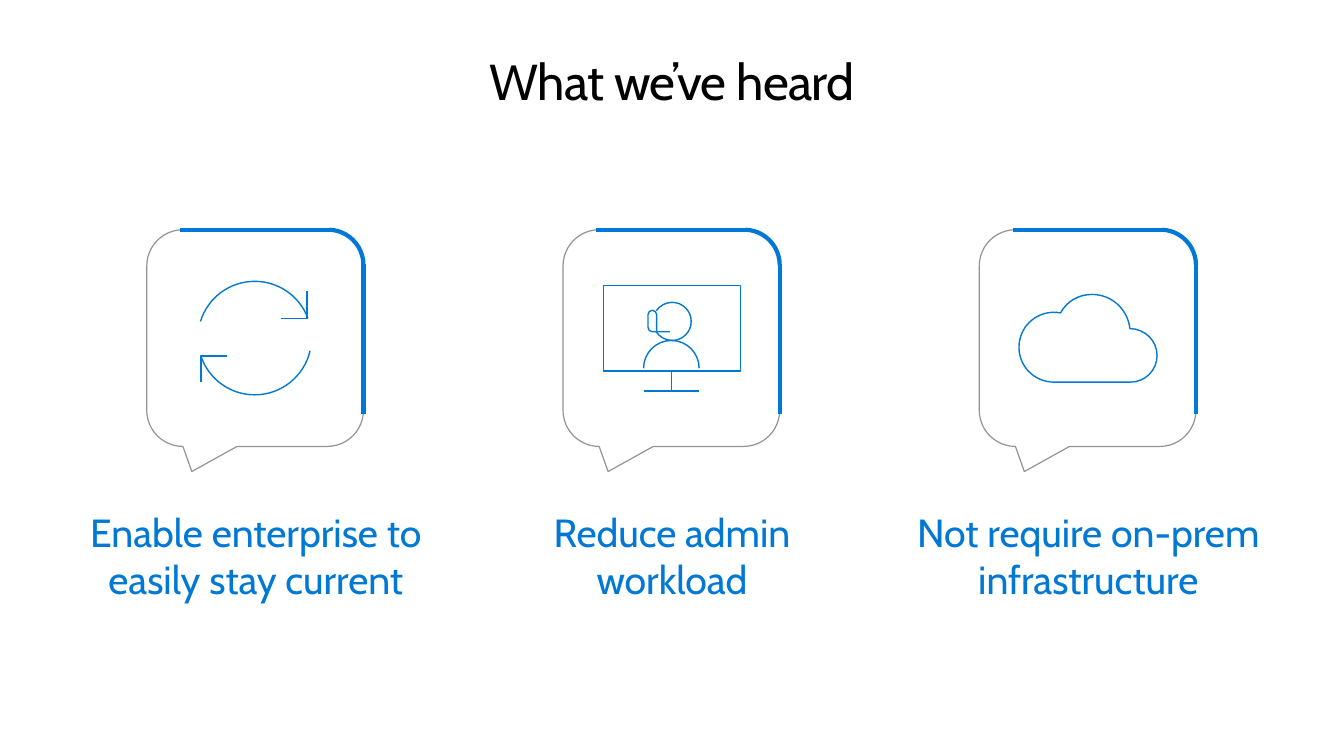
from math import ceil, cos, floor, radians, sin, tan

from lxml import etree
from pptx import Presentation
from pptx import oxml
from pptx import util as u
from pptx.dml.color import RGBColor
from pptx.enum import shapes, text

BLACK = RGBColor(0x00, 0x00, 0x00)
WHITE = RGBColor(0xFF, 0xFF, 0xFF)
GRAY = RGBColor(0x93, 0x93, 0x93)
BLUE = RGBColor(0x00, 0x78, 0xD4)
ACCENT = RGBColor(0x00, 0x78, 0xD7)
FONT = "Cabin"

LEFT, PITCH, COLUMN = 1.62, 10.49, 9.65
BUBBLE_LEFT, BUBBLE_TOP, BUBBLE = 3.7, 5.79, 5.46
CORNER = 1.78
CAPTION_TOP, CAPTION_HEIGHT = 12.68, 2.64


def arc(cx, cy, r, start, end):
    low, high = sorted((start, end))
    turns = [q * 90 for q in range(floor(low / 90) + 1, ceil(high / 90))]
    stops = [low, *turns, high]
    if end < start:
        stops.reverse()
    segments = [[(cx + r * cos(radians(start)), cy + r * sin(radians(start)))]]
    for first, last in zip(stops, stops[1:]):
        a, b = radians(first), radians(last)
        k = 4 / 3 * tan((b - a) / 4)
        segments.append([
            (cx + r * (cos(a) - k * sin(a)), cy + r * (sin(a) + k * cos(a))),
            (cx + r * (cos(b) + k * sin(b)), cy + r * (sin(b) - k * cos(b))),
            (cx + r * cos(b), cy + r * sin(b)),
        ])
    return segments


def line(*points):
    return [[point] for point in points]


REFRESH = [
    arc(2.72, 2.73, 1.43, 13, 162),
    arc(2.72, 2.73, 1.43, 339.5, 197),
    line((3.37, 2.24), (4.04, 2.24), (4.04, 1.55)),
    line((2.03, 3.18), (1.37, 3.18), (1.37, 3.84)),
]
MONITOR = [
    line((4.47, 2.36), (4.47, 3.56), (1.02, 3.56), (1.02, 1.4), (4.47, 1.4), (4.47, 2.36)),
    line((2.74, 3.56), (2.74, 4.06)),
    line((2.03, 4.06), (3.43, 4.06)),
]
AGENT = [
    arc(2.73, 3.49, 0.7, 180, 360),
    line((2.36, 2.57)) + arc(2.25, 2.14, 0.11, 0, -180)
    + arc(2.25, 2.46, 0.11, 180, 90) + line((2.69, 2.57)),
    arc(2.75, 2.31, 0.48, 149, -146),
]
CLOUD = [
    arc(1.88, 2.96, 0.88, 90, 281) + arc(2.84, 2.59, 0.96, 213, 354)[1:]
    + arc(3.81, 3.17, 0.67, 270, 450)[1:],
]

TITLE = "What we’ve heard"
NEEDS = [
    ("Enable enterprise to easily stay current", [REFRESH]),
    ("Reduce admin\nworkload", [MONITOR, AGENT]),
    ("Not require on-prem infrastructure", [CLOUD]),
]


def write(sp, content, size, color, spacing=0, inset=None):
    tf = sp.text_frame
    tf.word_wrap = True
    tf.auto_size = text.MSO_AUTO_SIZE.SHAPE_TO_FIT_TEXT
    tf.vertical_anchor = text.MSO_ANCHOR.TOP
    if inset is not None:
        tf.margin_left = tf.margin_top = tf.margin_right = tf.margin_bottom = inset
    p = tf.paragraphs[0]
    p.text = content
    p.alignment = text.PP_ALIGN.CENTER
    for r in p.runs:
        r.font.name = FONT
        r.font.size = u.Pt(size)
        r.font.color.rgb = color
        if spacing:
            r.font._element.set("spc", str(int(spacing * 100)))


def outline(sp, color, width):
    sp.line.color.rgb = color
    sp.line.width = u.Pt(width)


def add_bubble(group, left, top):
    sp = group.shapes.add_shape(shapes.MSO_SHAPE.ROUNDED_RECTANGULAR_CALLOUT,
                                u.Cm(left), u.Cm(top), u.Cm(BUBBLE), u.Cm(BUBBLE))
    for i, value in enumerate((-0.292, 0.616, 0.167)):
        sp.adjustments[i] = value
    sp.shadow.inherit = False
    sp.fill.solid()
    sp.fill.fore_color.rgb = WHITE
    outline(sp, GRAY, 0.85)

    sp = group.shapes.add_shape(shapes.MSO_SHAPE.ARC, u.Cm(left + BUBBLE - CORNER),
                                u.Cm(top), u.Cm(CORNER), u.Cm(CORNER))
    sp.adjustments[0] = 163.434
    sp.shadow.inherit = False
    sp.fill.background()
    outline(sp, ACCENT, 3)

    for x1, y1, x2, y2 in ((0.84, 0, 4.62, 0), (BUBBLE, 0.86, BUBBLE, 4.65)):
        sp = group.shapes.add_connector(shapes.MSO_CONNECTOR.STRAIGHT,
                                        u.Cm(left + x1), u.Cm(top + y1),
                                        u.Cm(left + x2), u.Cm(top + y2))
        outline(sp, ACCENT, 3)
        etree.SubElement(sp._element.spPr, oxml.ns.qn("a:effectLst"))


def bend(sp, segments):
    steps = iter(list(sp._element.iter(oxml.ns.qn("a:lnTo"))))
    for segment in segments:
        parts = [next(steps) for _ in segment]
        if len(parts) == 3:
            curve = etree.Element(oxml.ns.qn("a:cubicBezTo"))
            parts[0].addprevious(curve)
            for part in parts:
                curve.append(part[0])
                part.getparent().remove(part)


def add_icon(group, strokes, left, top):
    builder = None
    for stroke in strokes:
        points = [(u.Cm(left + x), u.Cm(top + y)) for segment in stroke for x, y in segment]
        if builder is None:
            builder = group.shapes.build_freeform(*points[0])
        else:
            builder.move_to(*points[0])
        builder.add_line_segments(points[1:], close=strokes is CLOUD)
    sp = builder.convert_to_shape()
    bend(sp, [segment for stroke in strokes for segment in stroke[1:]])
    sp.shadow.inherit = False
    sp.fill.background()
    outline(sp, BLUE, 1)


def main():
    prs = Presentation()
    prs.slide_width, prs.slide_height = u.Cm(33.87), u.Cm(19.05)
    s = prs.slides.add_slide(prs.slide_layouts[5])
    title = s.shapes.title
    title.left, title.top = u.Cm(1.63), u.Cm(1.27)
    title.width, title.height = u.Cm(30.61), u.Cm(1.55)
    write(title, TITLE, 36, BLACK, spacing=-0.5, inset=0)

    for i, (caption, _) in enumerate(NEEDS):
        sp = s.shapes.add_textbox(u.Cm(LEFT + i * PITCH), u.Cm(CAPTION_TOP),
                                  u.Cm(COLUMN), u.Cm(CAPTION_HEIGHT))
        write(sp, caption, 28, BLUE)

    for i, (_, icons) in enumerate(NEEDS):
        left = BUBBLE_LEFT + i * PITCH
        group = s.shapes.add_group_shape()
        add_bubble(group, left, BUBBLE_TOP)
        for icon in icons:
            add_icon(group, icon, left, BUBBLE_TOP)

    prs.save("out.pptx")


if __name__ == "__main__":
    main()
